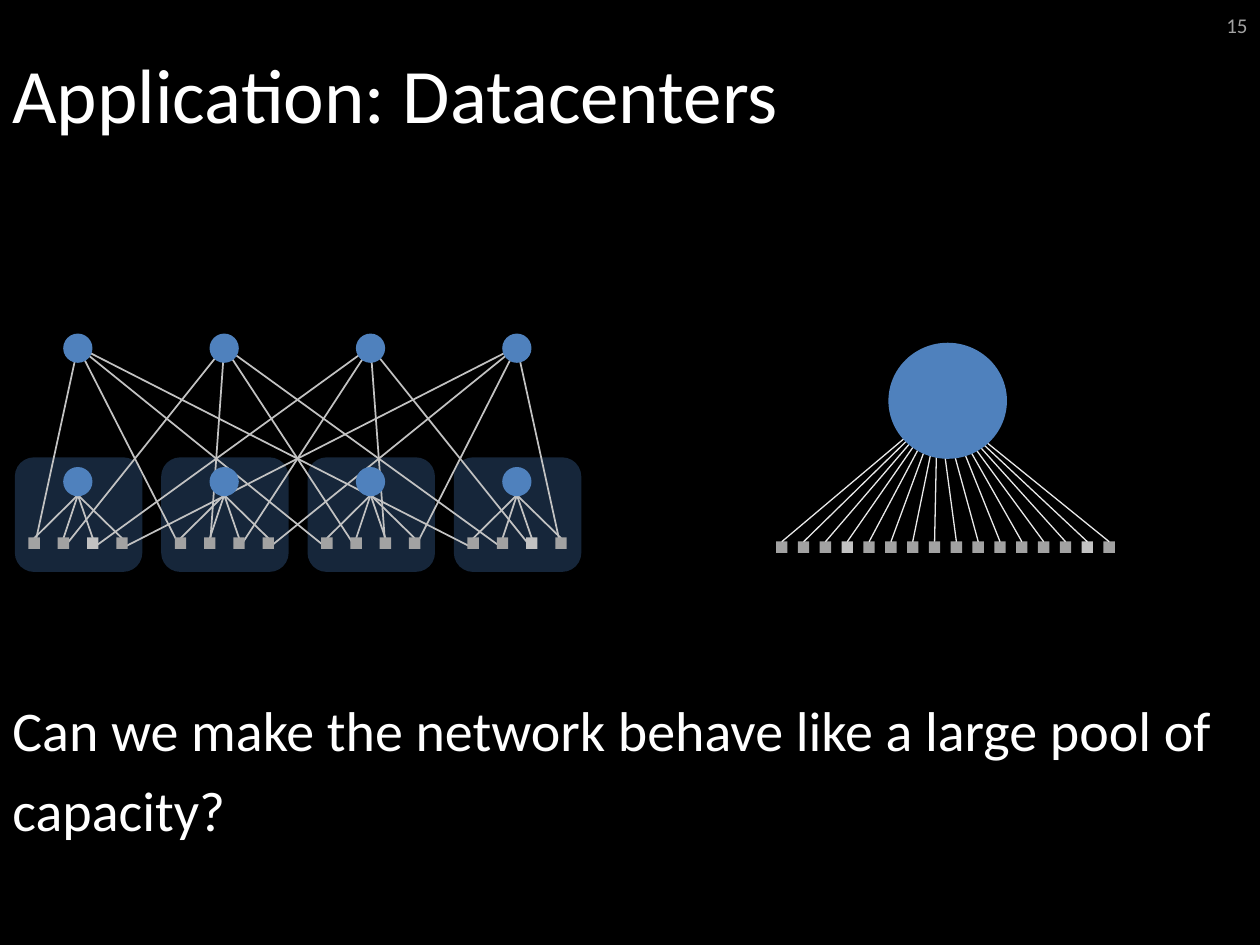
"""Build the datacenter slide: a pod network beside one large pool of capacity."""
from pptx import Presentation
from pptx.dml.color import RGBColor
from pptx.enum.shapes import MSO_CONNECTOR as Connector, MSO_SHAPE as Shape
from pptx.enum.text import MSO_ANCHOR as Anchor, PP_ALIGN as Align
from pptx.oxml.ns import qn
from pptx.util import Cm, Pt
from lxml.etree import SubElement

COLORS = {
    "background": "000000", "text": "FFFFFF", "number": "A2A2A2",
    "pod": "254061", "switch": "4F81BD", "server": "A2A2A2",
    "marked": "C2C2C2", "link": "C2C2C2", "pool_link": "E9E9E9",
}
PODS = SERVERS = 4
POD_PITCH, SERVER_PITCH, POOL_PITCH = 2.95, 0.59, 0.44
SWITCH_SIZE, SERVER_SIZE = 0.59, 0.23
MARKED_SERVERS = {(0, 2), (3, 2)}
MARKED_POOL_SERVERS = {3, 14}
POOL_ENDS = [(18.95, 8.23)] * 7 + [(18.9, 8.08)] * 2 + [(18.9, 7.92)] + [(19.1, 8.28)] * 6


class SlideBuilder:
    """Hold the style and the current slide, and add elements in centimetres."""

    def __init__(self, slide, colors, font="Calibri"):
        self.slide, self.colors, self.font = slide, colors, font
        self.shapes = slide.shapes
        fill = slide.background.fill
        fill.solid()
        fill.fore_color.rgb = self.color("background")

    def color(self, name):
        return RGBColor.from_string(self.colors[name])

    def start_group(self):
        self.shapes = self.slide.shapes.add_group_shape().shapes

    def text(self, wording, box, size, color="text", anchor=Anchor.MIDDLE,
             align=Align.LEFT, spacing=1.0, before=0):
        frame = self.slide.shapes.add_textbox(*map(Cm, box)).text_frame
        frame.word_wrap = True
        frame.vertical_anchor = anchor
        paragraph = frame.paragraphs[0]
        paragraph.text = wording
        paragraph.alignment = align
        paragraph.line_spacing = spacing
        paragraph.space_before = Pt(before)
        paragraph.font.name = self.font
        paragraph.font.size = Pt(size)
        paragraph.font.color.rgb = self.color(color)

    def shape(self, kind, box, color, opacity=100):
        shape = self.shapes.add_shape(kind, *map(Cm, box))
        shape.shadow.inherit = False
        shape.line.fill.background()
        shape.fill.solid()
        shape.fill.fore_color.rgb = self.color(color)
        if opacity < 100:
            tone = shape.fill._xPr.find(qn("a:solidFill"))[0]
            SubElement(tone, qn("a:alpha"), val=str(opacity * 1000))

    def centered(self, kind, x, y, size, color):
        self.shape(kind, (x - size / 2, y - size / 2, size, size), color)

    def line(self, start, end, color, width):
        line = self.shapes.add_connector(Connector.STRAIGHT, *map(Cm, start + end))
        line.line.color.rgb = self.color(color)
        line.line.width = Pt(width)
        SubElement(line._element.spPr, qn("a:effectLst"))


def draw_network(builder):
    """Draw the pods, whose servers each link to one core switch."""
    builder.start_group()
    centers = [1.57 + POD_PITCH * pod for pod in range(PODS)]
    servers = [(pod, rank, 0.69 + POD_PITCH * pod + SERVER_PITCH * rank)
               for pod in range(PODS) for rank in range(SERVERS)]
    for pod in range(PODS):
        builder.shape(Shape.ROUNDED_RECTANGLE,
                      (0.3 + POD_PITCH * pod, 9.22, 2.57, 2.31), "pod", 60)
    for pod, rank, x in servers:
        builder.line((x, 10.85), (centers[pod], 9.98), "link", 1)
        builder.line((x, 11.05), (centers[rank], 6.99), "link", 1)
    for y in (9.71, 7.02):
        for x in centers:
            builder.centered(Shape.OVAL, x, y, SWITCH_SIZE, "switch")
    for pod, rank, x in servers:
        color = "marked" if (pod, rank) in MARKED_SERVERS else "server"
        builder.centered(Shape.RECTANGLE, x, 10.95, SERVER_SIZE, color)


def draw_pool(builder):
    """Draw one large switch linked to every server."""
    builder.start_group()
    for index, end in enumerate(POOL_ENDS):
        x = 15.76 + POOL_PITCH * index
        color = "marked" if index in MARKED_POOL_SERVERS else "server"
        builder.centered(Shape.RECTANGLE, x, 11.03, SERVER_SIZE, color)
        builder.line((x, 10.92), end, "pool_link", 0.75)
    builder.shape(Shape.OVAL, (17.91, 6.91, 2.39, 2.34), "switch")


def main():
    """Build and save the slide."""
    presentation = Presentation()
    presentation.slide_width, presentation.slide_height = Cm(25.4), Cm(19.05)
    slide = presentation.slides.add_slide(presentation.slide_layouts[6])
    builder = SlideBuilder(slide, COLORS)
    builder.text("Application: Datacenters", (0, 0, 25.4, 3.73), 44)
    builder.text("Can we make the network behave like a large pool of capacity?",
                 (0, 12.45, 25.4, 4.67), 32, anchor=Anchor.BOTTOM, spacing=1.2, before=16)
    builder.text("15", (23.29, 0, 2.11, 1.02), 12, "number", align=Align.RIGHT)
    draw_network(builder)
    draw_pool(builder)
    presentation.save("out.pptx")


if __name__ == "__main__":
    main()
